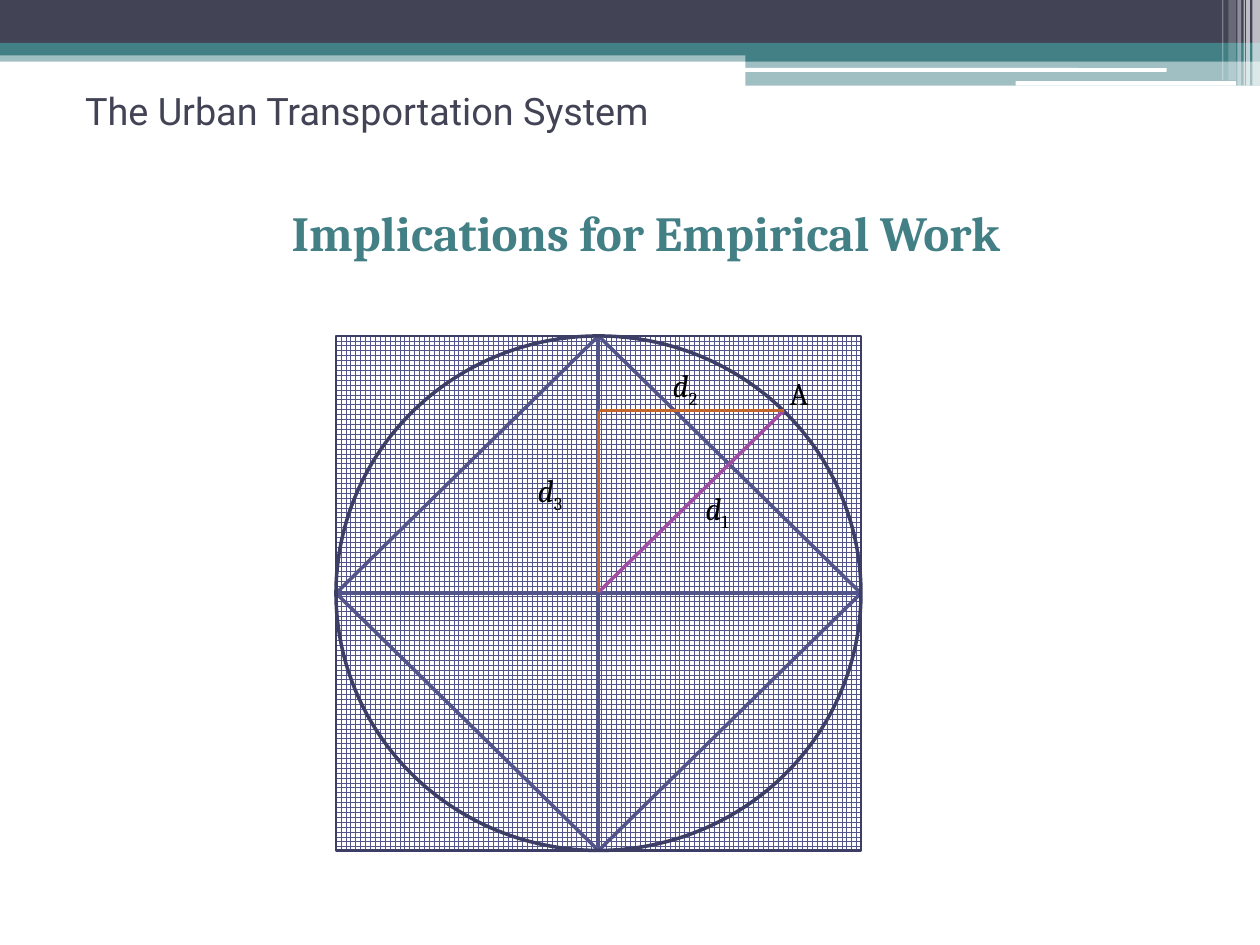
"""Build the slide on distances in the urban transportation system."""
from typing import NamedTuple

from lxml import etree
from pptx import Presentation
from pptx import util as u
from pptx.dml.color import RGBColor
from pptx.enum import dml, shapes, text
from pptx.oxml.ns import qn

INK = RGBColor(0x42, 0x44, 0x56)
TEAL = RGBColor(0x43, 0x80, 0x86)
WHITE = RGBColor(0xFF, 0xFF, 0xFF)
BLACK = RGBColor(0, 0, 0)
GRID = RGBColor(0x53, 0x54, 0x8A)
OUTLINE = RGBColor(0x3D, 0x3E, 0x66)
PURPLE = RGBColor(0xA0, 0x4D, 0xA3)
ORANGE = RGBColor(0xC4, 0x65, 0x2D)
RECT, ROUND = shapes.MSO_SHAPE.RECTANGLE, shapes.MSO_SHAPE.ROUNDED_RECTANGLE
OVAL = shapes.MSO_SHAPE.OVAL
TOP, LEFT, BOTTOM, RIGHT = range(4)


class Band(NamedTuple):
    left: float
    top: float
    width: float
    height: float
    color: RGBColor
    opacity: int = 100
    kind: shapes.MSO_SHAPE = RECT


class Label(NamedTuple):
    left: float
    top: float
    width: float
    letter: str
    index: str = ""


class Segment(NamedTuple):
    start: tuple[float, float]
    end: tuple[float, float]
    color: RGBColor


BANDS = [
    Band(0, 28.8, 720, 6.48, TEAL, 50),
    Band(0, 0, 720, 24.48, INK),
    Band(0, 24.48, 720, 7.2, TEAL),
    Band(426, 28, 294, 7.2, TEAL),
    Band(426, 35.2, 294, 13.8, TEAL, 50),
    Band(425.5, 38.9, 241.2, 2.16, WHITE, 100, ROUND),
    Band(580.3, 46.4, 126, 2.6, WHITE, 100, ROUND),
    Band(715.68, 0, 4.32, 49, WHITE, 65),
    Band(712.08, 0, 2.16, 49, WHITE, 65),
    Band(710.64, 0, 0.72, 49, WHITE, 60),
    Band(707.04, 0, 2.16, 49, WHITE, 40),
    Band(702, 0, 4.32, 46, WHITE, 20),
    Band(698.4, 0, 0.72, 46, WHITE, 30),
]
CITY = (192, 192, 300, 294)
CENTER, POINT_A, CORNER = (342, 338.4), (447.8, 234.7), (342, 234.7)
SPOKES = [(TOP, BOTTOM), (RIGHT, LEFT), (TOP, LEFT),
          (LEFT, BOTTOM), (BOTTOM, RIGHT), (TOP, RIGHT)]
DISTANCES = [
    Segment(CENTER, POINT_A, PURPLE),
    Segment(POINT_A, CORNER, ORANGE),
    Segment(CENTER, CORNER, ORANGE),
]
LABELS = [
    Label(377.3, 205.9, 36, "d", "2"),
    Label(396, 275.8, 36, "d", "1"),
    Label(300.2, 265.7, 36, "d", "3"),
    Label(444.2, 210.2, 23.8, "A"),
]


def add_shape(page, kind, *frame: float):
    shape = page.shapes.add_shape(kind, *map(u.Pt, frame))
    shape.shadow.inherit = False
    return shape


def add_band(page, band: Band) -> None:
    shape = add_shape(page, band.kind, *band[:4])
    shape.line.fill.background()
    shape.fill.solid()
    shape.fill.fore_color.rgb = band.color
    if band.opacity < 100:
        color = shape.fill._xPr.find(qn("a:solidFill"))[0]
        etree.SubElement(color, qn("a:alpha")).set("val", str(band.opacity * 1000))


def add_line(page, segment: Segment):
    points = map(u.Pt, (*segment.start, *segment.end))
    line = page.shapes.add_connector(shapes.MSO_CONNECTOR.STRAIGHT, *points)
    line.line.color.rgb = segment.color
    line.line.width = u.Pt(2)
    etree.SubElement(line._element.spPr, qn("a:effectLst"))
    return line


def add_text(page, frame: tuple, words: str, face: str, size: float, color: RGBColor):
    box = page.shapes.add_textbox(*map(u.Pt, frame))
    box.text_frame.word_wrap = True
    para = box.text_frame.paragraphs[0]
    para.add_run().text = words
    para.font.name = face
    para.font.size = u.Pt(size)
    para.font.color.rgb = color
    return box.text_frame, para


def add_label(page, label: Label) -> None:
    frame = (label.left, label.top, label.width, 28.8)
    _, para = add_text(page, frame, label.letter, "Cambria", 18, BLACK)
    if label.index:
        para.runs[0].font.italic = True
        span = para.add_run()
        span.text = label.index
        span.font._element.set("baseline", "-25000")


def add_headings(page) -> None:
    frame, _ = add_text(page, (36, 46, 648, 34), "The Urban Transportation System",
                        "Roboto", 21.6, INK)
    frame.margin_left = u.Pt(12.6)
    frame.vertical_anchor = text.MSO_ANCHOR.MIDDLE
    frame, para = add_text(page, (36, 112.3, 648, 422), "Implications for Empirical Work",
                           "Cambria", 28, TEAL)
    frame.margin_left = u.Pt(25.2)
    para.alignment = text.PP_ALIGN.CENTER
    para.font.bold = True


def add_city(page) -> None:
    square = add_shape(page, RECT, *CITY)
    square.fill.patterned()
    square.fill.pattern = dml.MSO_PATTERN.LARGE_GRID
    square.fill.fore_color.rgb = GRID
    square.fill.back_color.rgb = WHITE
    square.line.color.rgb = OUTLINE
    square.line.width = u.Pt(1.5)
    for start, end in SPOKES:
        spoke = add_line(page, Segment(CENTER, CENTER, GRID))
        spoke.begin_connect(square, start)
        spoke.end_connect(square, end)
    circle = add_shape(page, OVAL, *CITY)
    circle.fill.background()
    circle.line.color.rgb = OUTLINE
    circle.line.width = u.Pt(2)
    for segment in DISTANCES:
        add_line(page, segment)
    for label in LABELS:
        add_label(page, label)


def main() -> None:
    deck = Presentation()
    deck.slide_width, deck.slide_height = u.Pt(720), u.Pt(540)
    page = deck.slides.add_slide(deck.slide_layouts[6])
    for band in BANDS:
        add_band(page, band)
    add_headings(page)
    add_city(page)
    deck.save("out.pptx")


if __name__ == "__main__":
    main()
